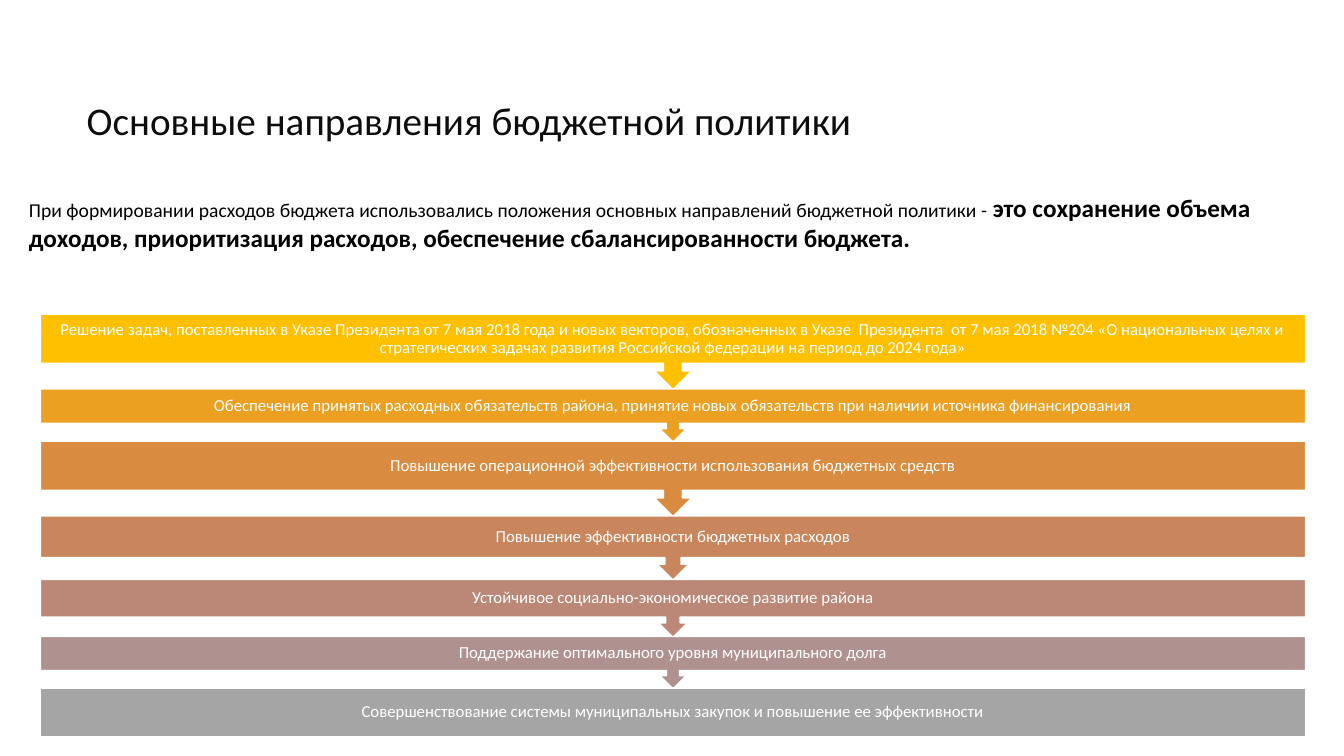
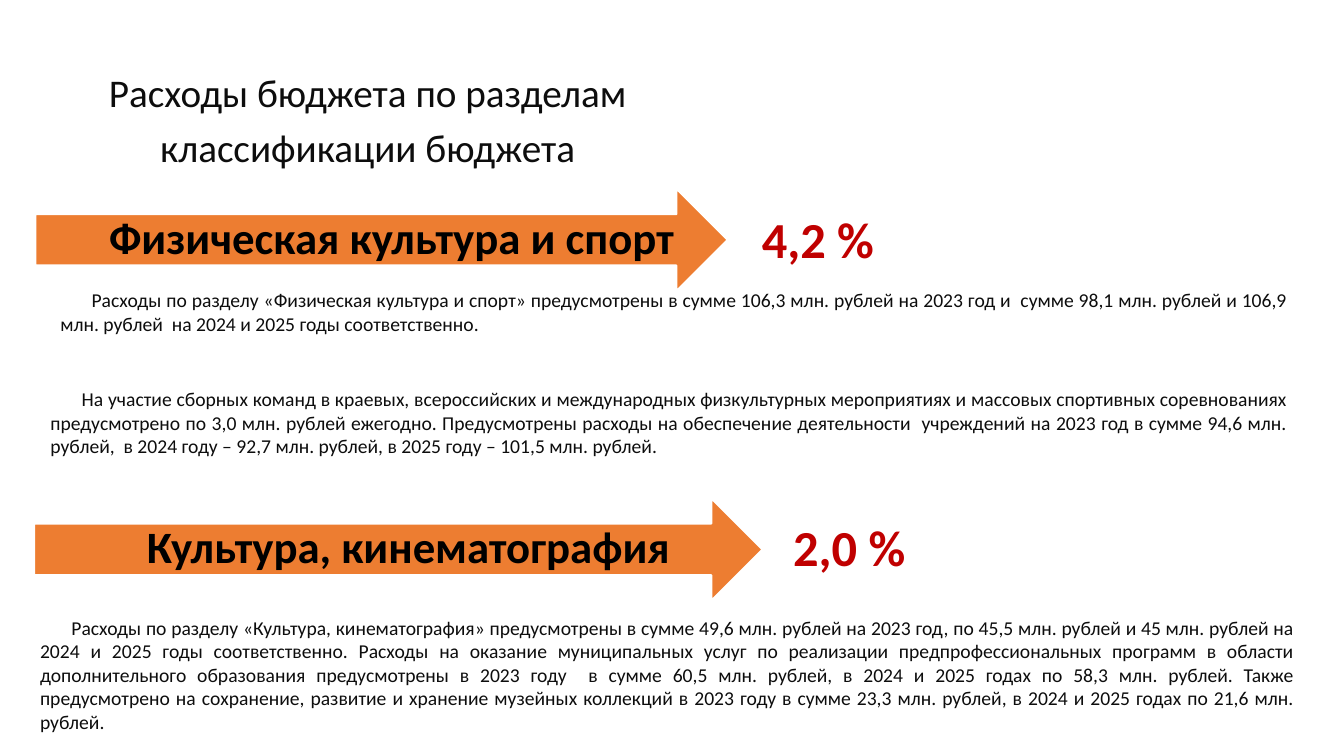
from pptx import Presentation
from pptx.dml.color import RGBColor
from pptx.enum.shapes import MSO_SHAPE
from pptx.enum.text import MSO_ANCHOR, PP_ALIGN
from pptx.util import Cm, Pt

FONT = "Calibri"
COLORS = {
    "black": "000000",
    "ink": "0D0D0D",
    "white": "FFFFFF",
    "orange": "ED7D31",
    "red": "C00000",
}


def write(frame, lines, size, color, bold=False, align=PP_ALIGN.LEFT,
          first_indent=0, gap=0, spacing=None):
    """Fill a text frame with equally styled paragraphs; gap is in points."""
    frame.word_wrap = True
    frame.text = "\n".join(lines)
    for number, paragraph in enumerate(frame.paragraphs):
        paragraph.alignment = align
        paragraph.line_spacing = spacing
        if number:
            paragraph.space_before = Pt(gap)
        if first_indent:
            paragraph._p.get_or_add_pPr().set("indent", str(Cm(first_indent)))
        for run in paragraph.runs:
            run.font.name = FONT
            run.font.size = Pt(size)
            run.font.bold = bold
            run.font.color.rgb = RGBColor.from_string(COLORS[color])


def add_block(slide, kind, left, top, width, height, fill, line_width):
    """Add a filled, white-edged shape and return its centred text frame."""
    block = slide.shapes.add_shape(kind, Cm(left), Cm(top), Cm(width), Cm(height))
    block.shadow.inherit = False
    block.fill.solid()
    block.fill.fore_color.rgb = RGBColor.from_string(fill)
    block.line.color.rgb = RGBColor.from_string(COLORS["white"])
    block.line.width = Pt(line_width)
    frame = block.text_frame
    frame.vertical_anchor = MSO_ANCHOR.MIDDLE
    frame.margin_top = frame.margin_bottom = 0
    return frame


presentation = Presentation()
presentation.slide_width = Cm(33.87)
presentation.slide_height = Cm(19.05)
blank = presentation.slide_layouts[6]
policy = presentation.slides.add_slide(blank)
spending = presentation.slides.add_slide(blank)

# Titles
titles = [
    (policy, 1.4, 2.31, 20.83, 1.14, ["Основные направления бюджетной политики"]),
    (spending, 0.3, 1.6, 17.93, 2.6,
     ["Расходы бюджета по разделам", "классификации бюджета"]),
]
for slide, left, top, width, height, lines in titles:
    title = slide.shapes.add_textbox(Cm(left), Cm(top), Cm(width), Cm(height))
    write(title.text_frame, lines, 28, "ink", align=PP_ALIGN.CENTER, gap=5.6)

# Slide 1: introduction and chain of policy directions
intro = policy.shapes.add_textbox(Cm(0.48), Cm(4.72), Cm(32.41), Cm(1.8))
write(intro.text_frame,
      ["При формировании расходов бюджета использовались положения основных "
       "направлений бюджетной политики - "], 14, "black")
goal = intro.text_frame.paragraphs[0].add_run()
goal.text = ("это сохранение объема доходов, приоритизация расходов, "
             "обеспечение сбалансированности бюджета.")
goal.font.name = FONT
goal.font.size = Pt(18)
goal.font.bold = True
goal.font.color.rgb = RGBColor.from_string(COLORS["black"])

directions = [
    (1.9, "FFC000",
     "Решение задач, поставленных в Указе Президента от 7 мая 2018 года и новых "
     "векторов, обозначенных в Указе  Президента  от 7 мая 2018 №204 «О "
     "национальных целях и стратегических задачах развития Российской федерации "
     "на период до 2024 года»"),
    (1.34, "EBA021",
     "Обеспечение принятых расходных обязательств района, принятие новых "
     "обязательств при наличии источника финансирования"),
    (1.9, "D98C3F",
     "Повышение операционной эффективности использования бюджетных средств"),
    (1.62, "C9855C", "Повышение эффективности бюджетных расходов"),
    (1.46, "BB8776", "Устойчивое социально-экономическое развитие района"),
    (1.32, "AF918F", "Поддержание оптимального уровня муниципального долга"),
    (1.22, "A5A5A5",
     "Совершенствование системы муниципальных закупок и повышение ее эффективности"),
]
OVERLAP = 0.02
step_top = 7.92
for height, fill, direction in directions:
    is_last = direction == directions[-1][2]
    kind = MSO_SHAPE.RECTANGLE if is_last else MSO_SHAPE.DOWN_ARROW_CALLOUT
    frame = add_block(policy, kind, 1.02, step_top, 31.88, height, fill, 1)
    write(frame, [direction], 12, "white", align=PP_ALIGN.CENTER, spacing=0.9)
    step_top += height - OVERLAP

# Slide 2: section arrows with shares
sections = [
    ("Физическая культура и спорт", "4,2 %", 0.89, 4.75, 17.45, 18.95, 5.13),
    ("Культура, кинематография", "2,0 %", 0.86, 12.55, 18.36, 19.74, 12.88),
]
for section, share, left, top, width, share_left, share_top in sections:
    frame = add_block(spending, MSO_SHAPE.RIGHT_ARROW, left, top, width, 2.59,
                      COLORS["orange"], 1.5)
    frame.margin_left = Cm(1.17)
    frame.margin_right = 0
    write(frame, [section], 32, "black", bold=True, align=PP_ALIGN.CENTER,
          spacing=0.9)
    share_box = spending.shapes.add_textbox(
        Cm(share_left), Cm(share_top), Cm(4), Cm(1.8))
    write(share_box.text_frame, [share], 36, "red", bold=True)

details = [
    (1.27, 7.14, 31.45, 1.45,
     "Расходы по разделу «Физическая культура и спорт» предусмотрены в сумме "
     "106,3 млн. рублей на 2023 год и  сумме 98,1 млн. рублей и 106,9 млн. "
     "рублей  на 2024 и 2025 годы соответственно."),
    (1.02, 9.63, 31.7, 2.06,
     "На участие сборных команд в краевых, всероссийских и международных "
     "физкультурных мероприятиях и массовых спортивных соревнованиях "
     "предусмотрено по 3,0 млн. рублей ежегодно. Предусмотрены расходы на "
     "обеспечение деятельности  учреждений на 2023 год в сумме 94,6 млн. "
     "рублей,  в 2024 году – 92,7 млн. рублей, в 2025 году – 101,5 млн. рублей."),
    (0.76, 15.39, 32.13, 2.64,
     "Расходы по разделу «Культура, кинематография» предусмотрены в сумме 49,6 "
     "млн. рублей на 2023 год, по 45,5 млн. рублей и 45 млн. рублей на 2024 и "
     "2025 годы соответственно. Расходы на оказание муниципальных услуг по "
     "реализации предпрофессиональных программ в области дополнительного "
     "образования предусмотрены в 2023 году  в сумме 60,5 млн. рублей, в 2024 и "
     "2025 годах по 58,3 млн. рублей. Также предусмотрено на сохранение, "
     "развитие и хранение музейных коллекций в 2023 году в сумме 23,3 млн. "
     "рублей, в 2024 и 2025 годах по 21,6 млн. рублей."),
]
for left, top, width, height, detail in details:
    detail_box = spending.shapes.add_textbox(Cm(left), Cm(top), Cm(width), Cm(height))
    write(detail_box.text_frame, [detail], 14, "ink", align=PP_ALIGN.JUSTIFY,
          first_indent=0.79)

presentation.save("out.pptx")
